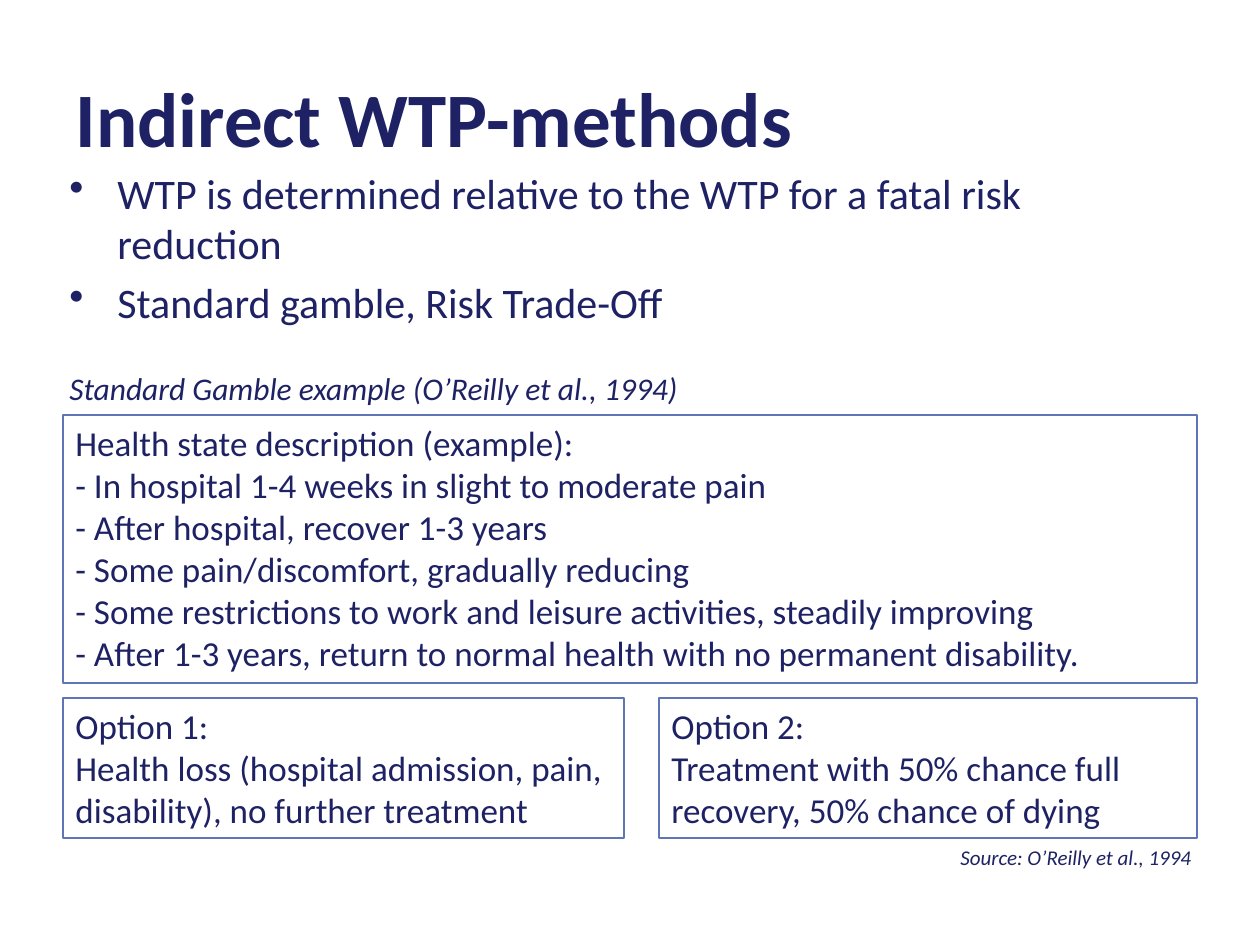
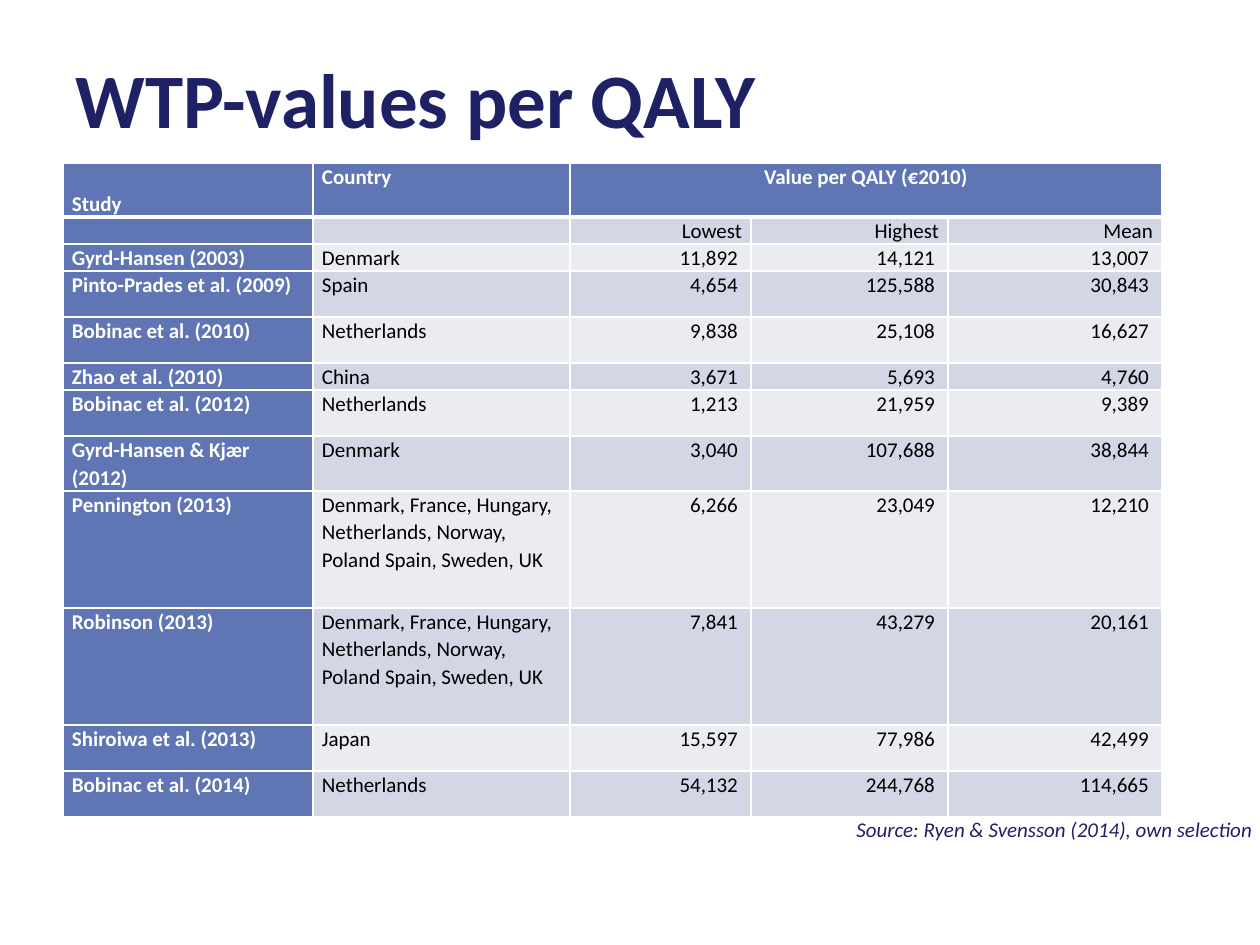
from lxml import etree
from pptx import Presentation
from pptx import util as u
from pptx.dml.color import RGBColor
from pptx.enum import shapes, text
from pptx.oxml import ns

PX = u.Inches(1) / 126
FONT = "Calibri"
COLORS = {
    "navy": "1E2264",
    "blue": "6076B4",
    "band_dark": "D2D6E5",
    "band_light": "EAECF2",
    "white": "FFFFFF",
    "black": "000000",
}
LEFT, CENTER, RIGHT = text.PP_ALIGN.LEFT, text.PP_ALIGN.CENTER, text.PP_ALIGN.RIGHT


def px(*lengths):
    return [u.Emu(round(length * PX)) for length in lengths]


def write(frame, lines, size, color="navy", bold=False, italic=False, align=LEFT,
          anchor=text.MSO_ANCHOR.TOP, bullet=None, gap=0, line_spacing=None):
    frame.word_wrap = True
    frame.vertical_anchor = anchor
    for index, line in enumerate(lines):
        paragraph = frame.paragraphs[0] if index == 0 else frame.add_paragraph()
        paragraph.alignment = align
        if index:
            paragraph.space_before = u.Pt(gap)
        if line_spacing:
            paragraph.line_spacing = line_spacing
        if bullet:
            properties = paragraph._p.get_or_add_pPr()
            indent = px(48)[0]
            properties.set("marL", str(indent))
            properties.set("indent", str(-indent))
            etree.SubElement(properties, ns.qn("a:buChar")).set("char", bullet)
        run = paragraph.add_run()
        run.text = line
        run.font.name = FONT
        run.font.size = u.Pt(size)
        run.font.bold = bold
        run.font.italic = italic
        run.font.color.rgb = RGBColor.from_string(COLORS[color])


presentation = Presentation()
presentation.slide_width, presentation.slide_height = px(1260, 945)
title_only = presentation.slide_layouts[5]

pages = [
    {
        "title": "Indirect WTP-methods",
        "title_top": 38,
        "texts": [
            ((57, 161, 1134, 190),
             ["WTP is determined relative to the WTP for a fatal risk reduction",
              "Standard gamble, Risk Trade-Off"],
             {"size": 24, "bullet": "•", "gap": 5}),
            ((57, 363, 1134, 50), ["Standard Gamble example (O’Reilly et al., 1994)"],
             {"size": 18, "italic": True}),
            ((948, 838, 277, 40), ["Source: O’Reilly et al., 1994"],
             {"size": 12, "italic": True}),
        ],
    },
    {
        "title": "WTP-values per QALY",
        "title_top": 19,
        "texts": [
            ((844, 810, 436, 38), ["Source: Ryen & Svensson (2014), own selection"],
             {"size": 12, "italic": True}),
        ],
    },
]

slides = []
for page in pages:
    slide = presentation.slides.add_slide(title_only)
    title = slide.shapes.title
    title.left, title.top, title.width, title.height = px(63, page["title_top"], 1134, 158)
    title.text_frame.auto_size = text.MSO_AUTO_SIZE.NONE
    write(title.text_frame, [page["title"]], size=44, bold=True, anchor=text.MSO_ANCHOR.MIDDLE)
    for place, lines, style in page["texts"]:
        box = slide.shapes.add_textbox(*px(*place))
        write(box.text_frame, lines, **style)
    slides.append(slide)

gamble_slide, values_slide = slides

gamble_boxes = [
    ((63, 415, 1134, 268), [
        "Health state description (example):",
        "- In hospital 1-4 weeks in slight to moderate pain",
        "- After hospital, recover 1-3 years",
        "- Some pain/discomfort, gradually reducing",
        "- Some restrictions to work and leisure activities, steadily improving",
        "- After 1-3 years, return to normal health with no permanent disability.",
    ]),
    ((63, 698, 561, 140), [
        "Option 1:",
        "Health loss (hospital admission, pain, disability), no further treatment",
    ]),
    ((659, 698, 538, 140), [
        "Option 2:",
        "Treatment with 50% chance full recovery, 50% chance of dying",
    ]),
]
for place, lines in gamble_boxes:
    box = gamble_slide.shapes.add_shape(shapes.MSO_SHAPE.RECTANGLE, *px(*place))
    box.shadow.inherit = False
    box.fill.background()
    box.line.color.rgb = RGBColor.from_string(COLORS["blue"])
    box.line.width = u.Pt(0.75)
    write(box.text_frame, lines, size=20)

many_countries = "Denmark, France, Hungary, Netherlands, Norway, Poland Spain, Sweden, UK"
rows = [
    ("Study", "Country", "Value per QALY (€2010)", "", ""),
    ("", "", "Lowest", "Highest", "Mean"),
    ("Gyrd-Hansen (2003)", "Denmark", "11,892", "14,121", "13,007"),
    ("Pinto-Prades et al. (2009)", "Spain", "4,654", "125,588", "30,843"),
    ("Bobinac et al. (2010)", "Netherlands", "9,838", "25,108", "16,627"),
    ("Zhao et al. (2010)", "China", "3,671", "5,693", "4,760"),
    ("Bobinac et al. (2012)", "Netherlands", "1,213", "21,959", "9,389"),
    ("Gyrd-Hansen & Kjær (2012)", "Denmark", "3,040", "107,688", "38,844"),
    ("Pennington (2013)", many_countries, "6,266", "23,049", "12,210"),
    ("Robinson (2013)", many_countries, "7,841", "43,279", "20,161"),
    ("Shiroiwa et al. (2013)", "Japan", "15,597", "77,986", "42,499"),
    ("Bobinac et al. (2014)", "Netherlands", "54,132", "244,768", "114,665"),
]
column_widths = [250, 257, 181, 197, 214]
row_heights = [54, 27, 27, 46, 46, 27, 46, 55, 117, 117, 46, 46]

table = values_slide.shapes.add_table(
    len(rows), len(column_widths),
    *px(63, 163, sum(column_widths), sum(row_heights))).table
for column, width in zip(table.columns, px(*column_widths)):
    column.width = width
for row, height in zip(table.rows, px(*row_heights)):
    row.height = height
table.cell(0, 2).merge(table.cell(0, 4))

for row_index, row in enumerate(rows):
    for column_index, value in enumerate(row):
        cell = table.cell(row_index, column_index)
        heading = row_index == 0 or column_index == 0
        number = row_index > 1 and column_index > 1
        cell.margin_left, cell.margin_right = px(9, 13 if number else 9)
        cell.margin_top = cell.margin_bottom = 0

        properties = cell._tc.get_or_add_tcPr()
        for side in "LRTB":
            thick = (row_index, side) in [(0, "B"), (1, "T")]
            border = etree.SubElement(properties, ns.qn("a:ln" + side))
            border.set("w", str(u.Pt(3 if thick else 1)))
            fill = etree.SubElement(border, ns.qn("a:solidFill"))
            etree.SubElement(fill, ns.qn("a:srgbClr")).set("val", COLORS["white"])

        band = "band_dark" if row_index % 2 else "band_light"
        cell.fill.solid()
        cell.fill.fore_color.rgb = RGBColor.from_string(COLORS["blue" if heading else band])

        if not value:
            cell.text_frame.paragraphs[0]._p.get_or_add_endParaRPr().set("sz", "1200")
            continue
        align = LEFT if column_index < 2 else RIGHT if row_index else CENTER
        write(cell.text_frame, [value], size=12, bold=heading, align=align, line_spacing=1.07,
              color="white" if heading else "black")

table.cell(0, 0).vertical_anchor = text.MSO_ANCHOR.BOTTOM

presentation.save("out.pptx")
